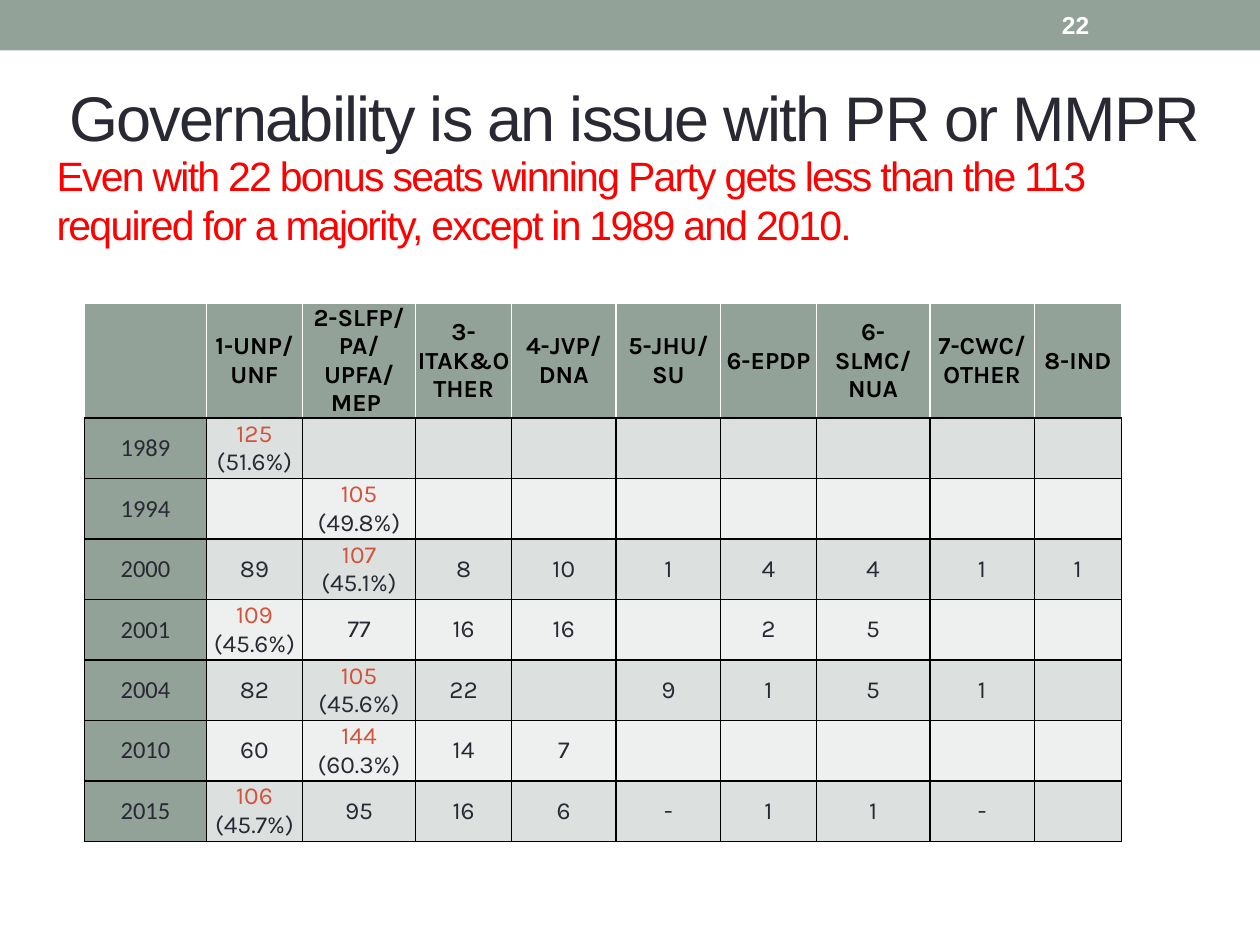
from dataclasses import dataclass

from lxml.etree import SubElement
from pptx import Presentation
from pptx.dml.color import RGBColor
from pptx.enum.shapes import MSO_SHAPE
from pptx.enum.text import MSO_ANCHOR, MSO_AUTO_SIZE, PP_ALIGN
from pptx.oxml.ns import qn
from pptx.util import Inches, Pt


@dataclass(frozen=True)
class Theme:
    sage: str = "93A299"
    ink: str = "292934"
    black: str = "000000"
    white: str = "FFFFFF"
    red: str = "FF0000"
    winner: str = "D2533C"
    bands: tuple = ("DCE0DE", "EEF0EF")
    heading_font: str = "Arial"
    table_font: str = "Karla"
    year_font: str = "Calibri"
    title_size: float = 36
    subtitle_size: float = 23.4
    small_size: float = 14
    tracking: int = -100  # hundredths of a point


THEME = Theme()

HEADERS = ["", "1-UNP/UNF", "2-SLFP/PA/UPFA/MEP ", "3-ITAK&OTHER", "4-JVP/DNA",
           "5-JHU/SU", "6-EPDP", "6-SLMC/NUA", "7-CWC/OTHER", "8-IND"]
# A second line in a cell gives the winning party's vote share
RESULTS = [
    ["1989", "125\n(51.6%)", "", "", "", "", "", "", "", ""],
    ["1994", "", "105\n(49.8%)", "", "", "", "", "", "", ""],
    ["2000", "89", "107\n(45.1%)", "8", "10", "1", "4", "4", "1", "1"],
    ["2001", "109\n(45.6%)", "77", "16", "16", "", "2", "5", "", ""],
    ["2004", "82", "105\n(45.6%)", "22", "", "9", "1", "5", "1", ""],
    ["2010", "60", "144\n(60.3%)", "14", "7", "", "", "", "", ""],
    ["2015", "106\n(45.7%)", "95", "16", "6", "-", "1", "1", "-", ""],
]
COLUMN_WIDTHS = [0.97, 0.76, 0.9, 0.76, 0.83, 0.83, 0.76, 0.9, 0.83, 0.69]
HEADER_HEIGHT, ROW_HEIGHT = 0.71, 0.48


def style_runs(para, font, size, color, bold=False, tracking=None):
    for span in para.runs:
        span.font.name = font
        span.font.size = Pt(size)
        span.font.bold = bold
        span.font.color.rgb = RGBColor.from_string(color)
        if tracking is not None:
            span.font._element.set("spc", str(tracking))


def place_text(shape, box, text, size, color, **style):
    shape.left, shape.top, shape.width, shape.height = box
    frame = shape.text_frame
    frame.text = text
    frame.word_wrap = True
    frame.auto_size = MSO_AUTO_SIZE.NONE
    frame.vertical_anchor = MSO_ANCHOR.MIDDLE
    para = frame.paragraphs[0]
    para.alignment = PP_ALIGN.LEFT
    style_runs(para, THEME.heading_font, size, color, **style)


def add_top_band(page, box):
    left, top, width, height = box
    band = page.shapes.add_shape(MSO_SHAPE.RECTANGLE, *box)
    band.shadow.inherit = False
    band.fill.solid()
    band.fill.fore_color.rgb = RGBColor.from_string(THEME.sage)
    band.line.fill.background()
    # Page number near the right end of the band
    number_box = (left + width - Inches(1.67), top + Inches(0.02),
                  Inches(1.17), height - Inches(0.04))
    place_text(page.shapes.add_textbox(*number_box), number_box, "22",
               THEME.small_size, THEME.white, bold=True)


def add_headings(page, title_box, subtitle_box):
    place_text(page.shapes.title, title_box, "Governability is an issue with PR or MMPR",
               THEME.title_size, THEME.ink, tracking=THEME.tracking)
    place_text(page.shapes.add_textbox(*subtitle_box), subtitle_box,
               "Even with 22 bonus seats winning Party gets less than the 113 "
               "required for a majority, except in 1989 and 2010.",
               THEME.subtitle_size, THEME.red, tracking=THEME.tracking)


def set_borders(cell, side_color):
    """Draw 1 pt borders; the bottom one is always black."""
    properties = cell._tc.get_or_add_tcPr()
    for side in "LRTB":
        line = SubElement(properties, qn(f"a:ln{side}"), w=str(Pt(1)))
        fill = SubElement(line, qn("a:solidFill"))
        SubElement(fill, qn("a:srgbClr"), val=THEME.black if side == "B" else side_color)


def fill_cell(cell, text, row, column):
    is_header, is_year = row == 0, column == 0
    set_borders(cell, THEME.white if is_header else THEME.black)
    cell.fill.solid()
    background = THEME.sage if is_header or is_year else THEME.bands[(row - 1) % 2]
    cell.fill.fore_color.rgb = RGBColor.from_string(background)
    cell.vertical_anchor = MSO_ANCHOR.MIDDLE
    if not is_year:
        cell.margin_left = cell.margin_right = cell.margin_top = cell.margin_bottom = 0
    if not text:
        return
    cell.text_frame.text = text
    paras = cell.text_frame.paragraphs
    for index, para in enumerate(paras):
        para.alignment = PP_ALIGN.CENTER
        is_winner = len(paras) > 1 and index == 0
        color = THEME.black if is_header else THEME.winner if is_winner else THEME.ink
        font = THEME.year_font if is_year else THEME.table_font
        style_runs(para, font, THEME.small_size, color, bold=is_header)


def add_seat_table(page, box):
    rows = [HEADERS] + RESULTS
    table = page.shapes.add_table(len(rows), len(HEADERS), *box).table
    table.horz_banding = False
    for column, width in zip(table.columns, COLUMN_WIDTHS):
        column.width = Inches(width)
    for r, texts in enumerate(rows):
        table.rows[r].height = Inches(ROW_HEIGHT if r else HEADER_HEIGHT)
        for c, text in enumerate(texts):
            fill_cell(table.cell(r, c), text, r, c)


def inches_box(*lengths):
    return tuple(Inches(length) for length in lengths)


def main():
    deck = Presentation()
    deck.slide_width, deck.slide_height = Inches(10), Inches(7.5)
    page = deck.slides.add_slide(deck.slide_layouts[5])
    add_top_band(page, inches_box(0, 0, 10, 0.4))
    add_headings(page, inches_box(0.45, 0.21, 9.53, 1.42), inches_box(0.35, 1.15, 8.99, 0.87))
    add_seat_table(page, inches_box(0.67, 2.41, 8.27, 4.32))
    deck.save("out.pptx")


if __name__ == "__main__":
    main()
